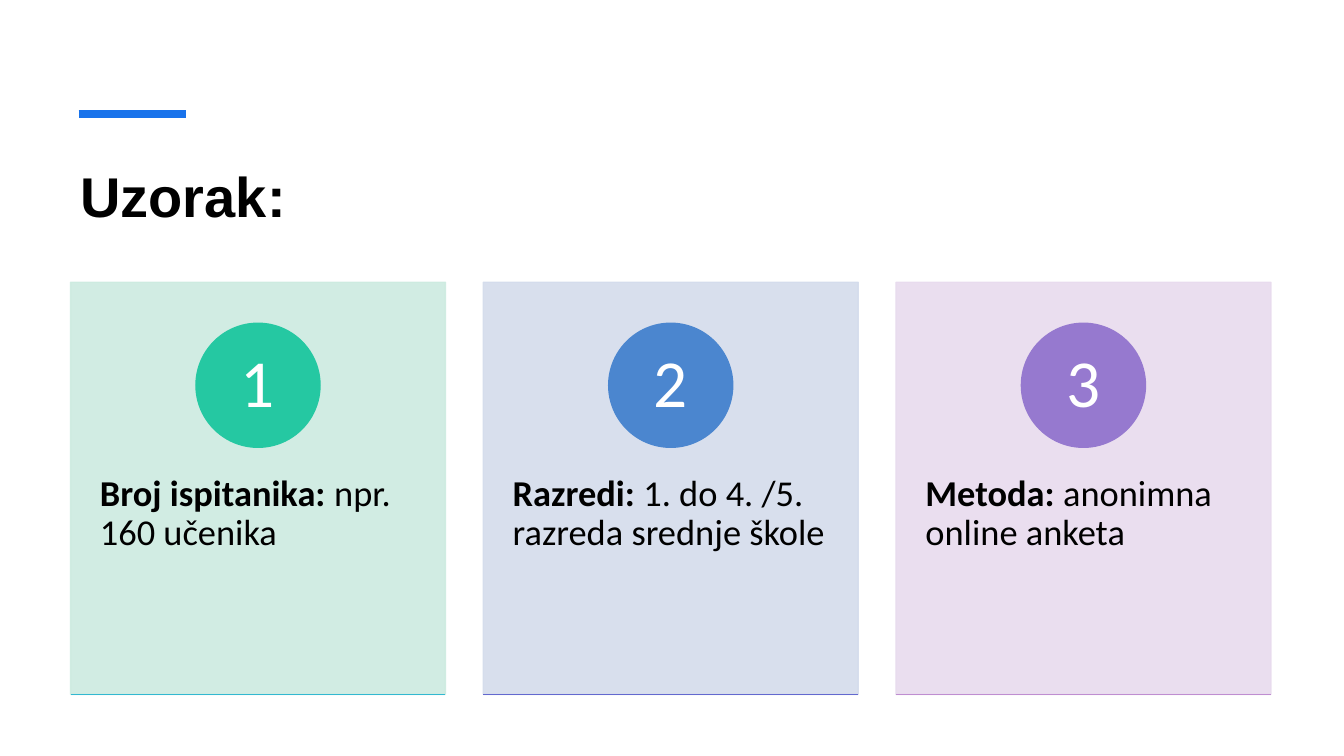
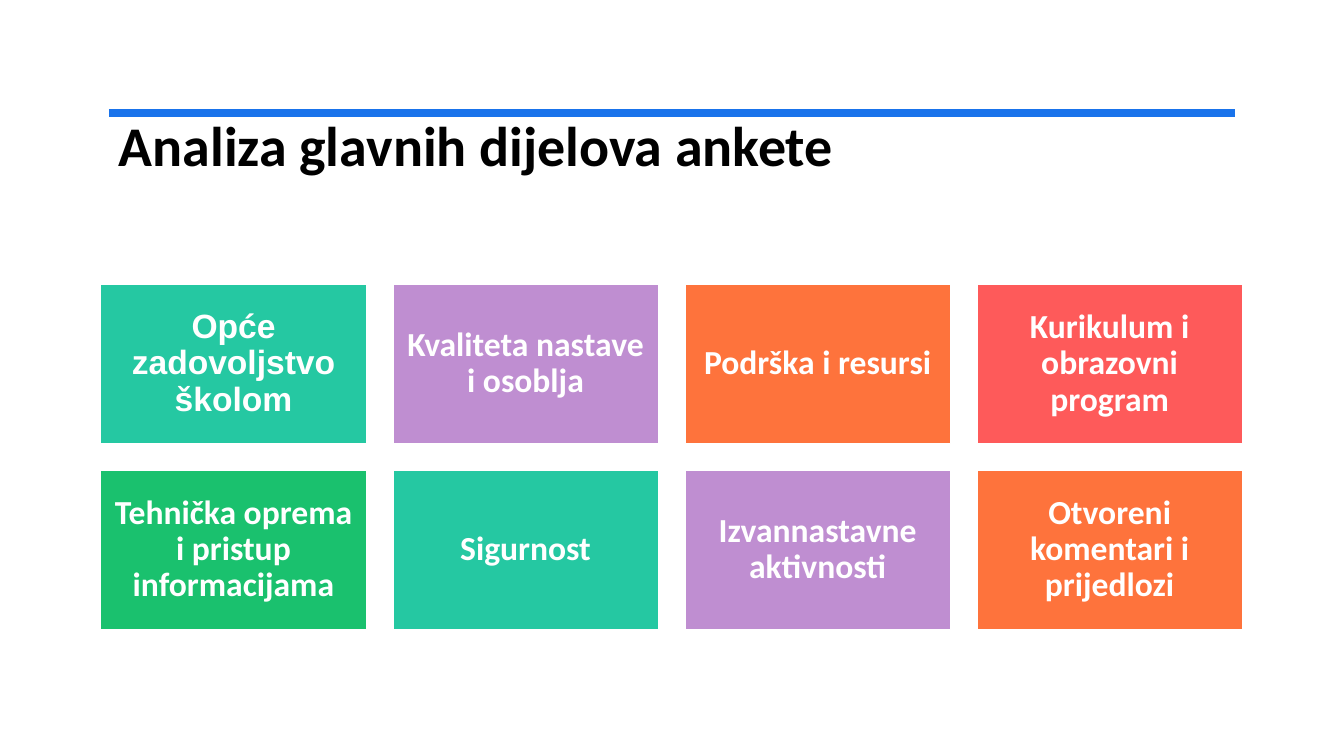
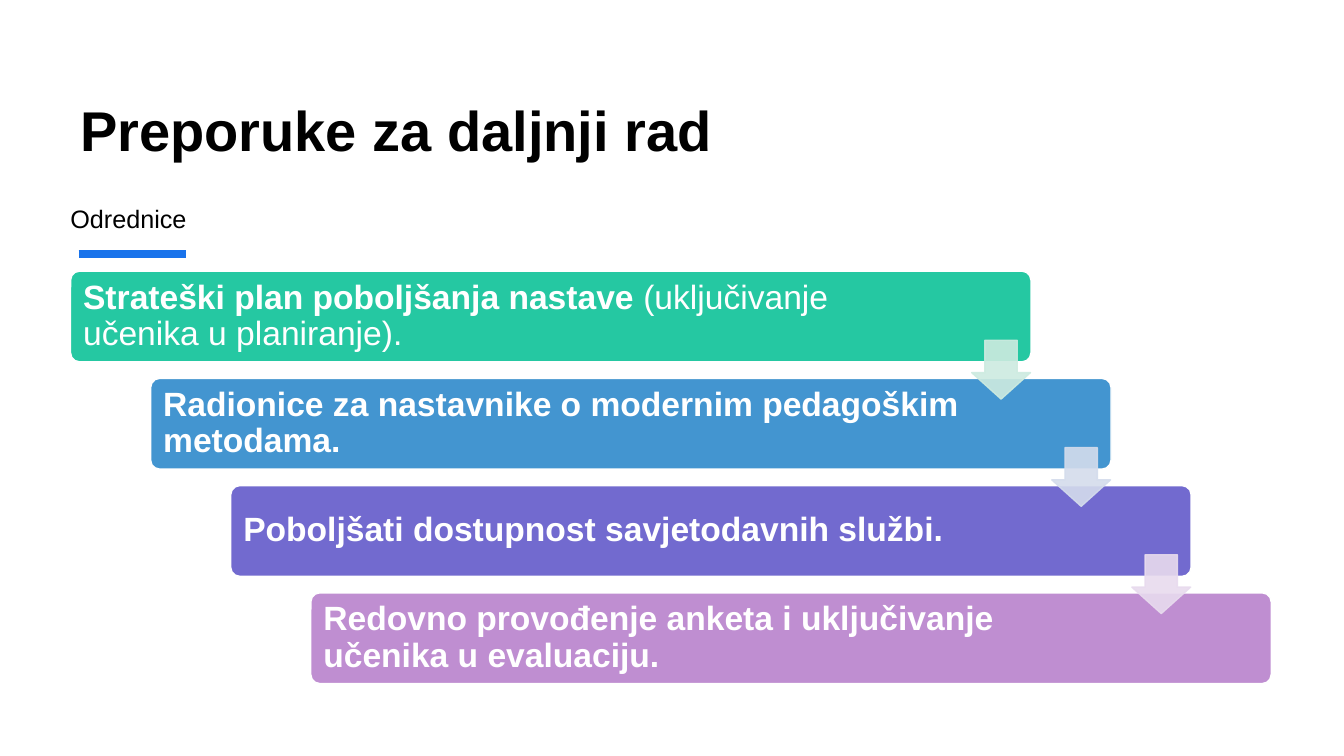
"""Build three survey slides: sample, analysed parts and recommendations."""
import dataclasses
import typing

import lxml.etree
import pptx
import pptx.dml.color
import pptx.enum.shapes
import pptx.enum.text
import pptx.oxml.ns
import pptx.util

Pt = pptx.util.Pt
SHAPES = pptx.enum.shapes.MSO_SHAPE
ALIGN = pptx.enum.text.PP_ALIGN
ANCHOR = pptx.enum.text.MSO_ANCHOR
qn = pptx.oxml.ns.qn

BLACK, WHITE, RULE_BLUE = "000000", "FFFFFF", "1973EB"
TEAL, LILAC, ORANGE, RED, GREEN = "25C8A2", "BF8ED1", "FE733C", "FE5A5A", "1AC16E"
TINTS = ("CDEBE0", "D4DCEC", "E8DBEE")
TINT_ALPHA = 90
MARGIN = 50.4

Runs = tuple[tuple[str, bool], ...]


@dataclasses.dataclass(frozen=True)
class Box:
    left: float
    top: float
    width: float
    height: float


@dataclasses.dataclass(frozen=True)
class Card:
    number: str
    runs: Runs
    tint: str
    circle: str
    edge: str


@dataclasses.dataclass(frozen=True)
class Tile:
    text: str
    color: str
    font: str = "Calibri"


@dataclasses.dataclass(frozen=True)
class Step:
    runs: Runs
    color: str


CARDS = (
    Card("1", (("Broj ispitanika:", True), (" npr. 160 učenika", False)), TINTS[0], TEAL, "33B8D1"),
    Card("2", (("Razredi:", True), (" 1. do 4. /5. razreda srednje škole", False)),
         TINTS[1], "4B86CF", "6369CF"),
    Card("3", (("Metoda:", True), (" anonimna online anketa", False)), TINTS[2], "9679CF", LILAC),
)
TILES = (
    Tile("Opće zadovoljstvo školom", TEAL, "Arial"),
    Tile("Kvaliteta nastave i osoblja", LILAC),
    Tile("Podrška i resursi", ORANGE),
    Tile("Kurikulum i obrazovni program", RED),
    Tile("Tehnička oprema i pristup informacijama", GREEN),
    Tile("Sigurnost", TEAL),
    Tile("Izvannastavne aktivnosti", LILAC),
    Tile("Otvoreni komentari i prijedlozi", ORANGE),
)
STEPS = (
    Step((("Strateški plan poboljšanja nastave", True),
          (" (uključivanje učenika u planiranje).", False)), TEAL),
    Step((("Radionice za nastavnike o modernim pedagoškim metodama.", True),), "4395D0"),
    Step((("Poboljšati dostupnost savjetodavnih službi.", True),), "726ACF"),
    Step((("Redovno provođenje anketa i uključivanje učenika u evaluaciju.", True),), LILAC),
)


def rgb(color: str) -> pptx.dml.color.RGBColor:
    return pptx.dml.color.RGBColor.from_string(color)


def place(box: Box) -> tuple[int, int, int, int]:
    return Pt(box.left), Pt(box.top), Pt(box.width), Pt(box.height)


def write(shape: typing.Any, runs: Runs, *, size: float, font: str = "Calibri",
          color: str = BLACK, align: typing.Any = ALIGN.LEFT, anchor: typing.Any = ANCHOR.TOP,
          insets: tuple[float, float, float, float] = (7.2, 3.6, 7.2, 3.6),
          spacing: float = 1.0) -> None:
    frame = shape.text_frame
    frame.word_wrap = True
    frame.vertical_anchor = anchor
    frame.margin_left, frame.margin_top, frame.margin_right, frame.margin_bottom = map(Pt, insets)
    para = frame.paragraphs[0]
    para.alignment = align
    para.line_spacing = spacing
    for text, bold in runs:
        span = para.add_run()
        span.text = text
        span.font.name = font
        span.font.size = Pt(size)
        span.font.bold = bold
        span.font.color.rgb = rgb(color)


def add_text(page: typing.Any, box: Box, runs: Runs, **style: typing.Any) -> None:
    write(page.shapes.add_textbox(*place(box)), runs, **style)


def add_title(page: typing.Any, box: Box, text: str, **style: typing.Any) -> None:
    add_text(page, box, ((text, True),), size=40, **style)


def add_panel(page: typing.Any, kind: typing.Any, box: Box, color: str, line: str,
              alpha: int = 100, adjustments: tuple[float, ...] = ()) -> typing.Any:
    shape = page.shapes.add_shape(kind, *place(box))
    shape.shadow.inherit = False
    for index, value in enumerate(adjustments):
        shape.adjustments[index] = value
    shape.fill.solid()
    shape.fill.fore_color.rgb = rgb(color)
    shape.line.color.rgb = rgb(line)
    shape.line.width = Pt(1)
    if alpha < 100:
        for node in shape.element.spPr.iter(qn("a:srgbClr")):
            lxml.etree.SubElement(node, qn("a:alpha")).set("val", str(alpha * 1000))
    return shape


def add_rule(page: typing.Any, left: float, right: float, top: float,
             color: str = RULE_BLUE, width: float = 6) -> None:
    rule = page.shapes.add_connector(pptx.enum.shapes.MSO_CONNECTOR.STRAIGHT,
                                     Pt(left), Pt(top), Pt(right), Pt(top))
    rule.line.color.rgb = rgb(color)
    rule.line.width = Pt(width)
    lxml.etree.SubElement(rule.element.spPr, qn("a:effectLst"))


def build_sample(page: typing.Any) -> None:
    add_title(page, Box(MARGIN, 112, 857.5, 82), "Uzorak:", font="Arial")
    add_rule(page, 56.2, 133.2, 81.4)
    width, pitch, top, height, diameter = 267.8, 294.8, 201.6, 294.4, 88.6
    for index, card in enumerate(CARDS):
        left = MARGIN + index * pitch
        panel = add_panel(page, SHAPES.RECTANGLE, Box(left, top, width, height),
                          card.tint, card.tint, TINT_ALPHA)
        write(panel, card.runs, size=26, insets=(21, 137.5, 21, 26), spacing=0.9)
        circle = add_panel(page, SHAPES.OVAL,
                           Box(left + (width - diameter) / 2, top + 29.3, diameter, diameter),
                           card.circle, card.circle)
        write(circle, ((card.number, False),), size=48, color=WHITE, align=ALIGN.CENTER,
              anchor=ANCHOR.MIDDLE, insets=(7.2, 0.7, 7.2, 0.7), spacing=0.9)
        add_rule(page, left, left + width, top + height, card.edge, 1)


def build_analysis(page: typing.Any) -> None:
    add_title(page, Box(77.8, 75.6, 815.8, 87), "Analiza glavnih dijelova ankete")
    add_rule(page, 77.8, 882, 80.8)
    columns, width, height, gap = 4, 189.6, 113.8, 19
    for index, tile in enumerate(TILES):
        row, column = divmod(index, columns)
        box = Box(72 + column * (width + gap), 203 + row * (height + gap), width, height)
        panel = add_panel(page, SHAPES.RECTANGLE, box, tile.color, WHITE)
        write(panel, ((tile.text, True),), size=24, font=tile.font, color=WHITE,
              align=ALIGN.CENTER, anchor=ANCHOR.MIDDLE, insets=(7.2,) * 4, spacing=0.9)


def build_recommendations(page: typing.Any) -> None:
    add_title(page, Box(MARGIN, 45.6, 857.5, 74.2), "Preporuke za daljnji rad",
              font="Arial", anchor=ANCHOR.BOTTOM)
    add_rule(page, 56.2, 133.2, 181.6)
    width, height, step_x, step_y = 686, 64.8, 57.2, 76.6
    corners = [(MARGIN + index * step_x, 193.7 + index * step_y) for index in range(len(STEPS))]
    for (left, top), step in zip(corners, STEPS):
        bar = add_panel(page, SHAPES.ROUNDED_RECTANGLE, Box(left, top, width, height),
                        step.color, WHITE, adjustments=(0.1,))
        write(bar, step.runs, size=24, font="Arial", color=WHITE, anchor=ANCHOR.MIDDLE,
              insets=(7.2, 7.2, 106, 7.2), spacing=0.9)
    for (left, top), tint in zip(corners, TINTS):
        add_panel(page, SHAPES.DOWN_ARROW, Box(left + 643.7, top + 49.4, 42, 42),
                  tint, tint, TINT_ALPHA, (0.55, 0.45))
    add_text(page, Box(43.2, 141.8, 648, 28.8), (("Odrednice", False),), size=18,
             font="Arial", anchor=ANCHOR.MIDDLE)


def main() -> None:
    deck = pptx.Presentation()
    deck.slide_width, deck.slide_height = Pt(960), Pt(540)
    for build in (build_sample, build_analysis, build_recommendations):
        build(deck.slides.add_slide(deck.slide_layouts[6]))
    deck.save("out.pptx")


if __name__ == "__main__":
    main()
